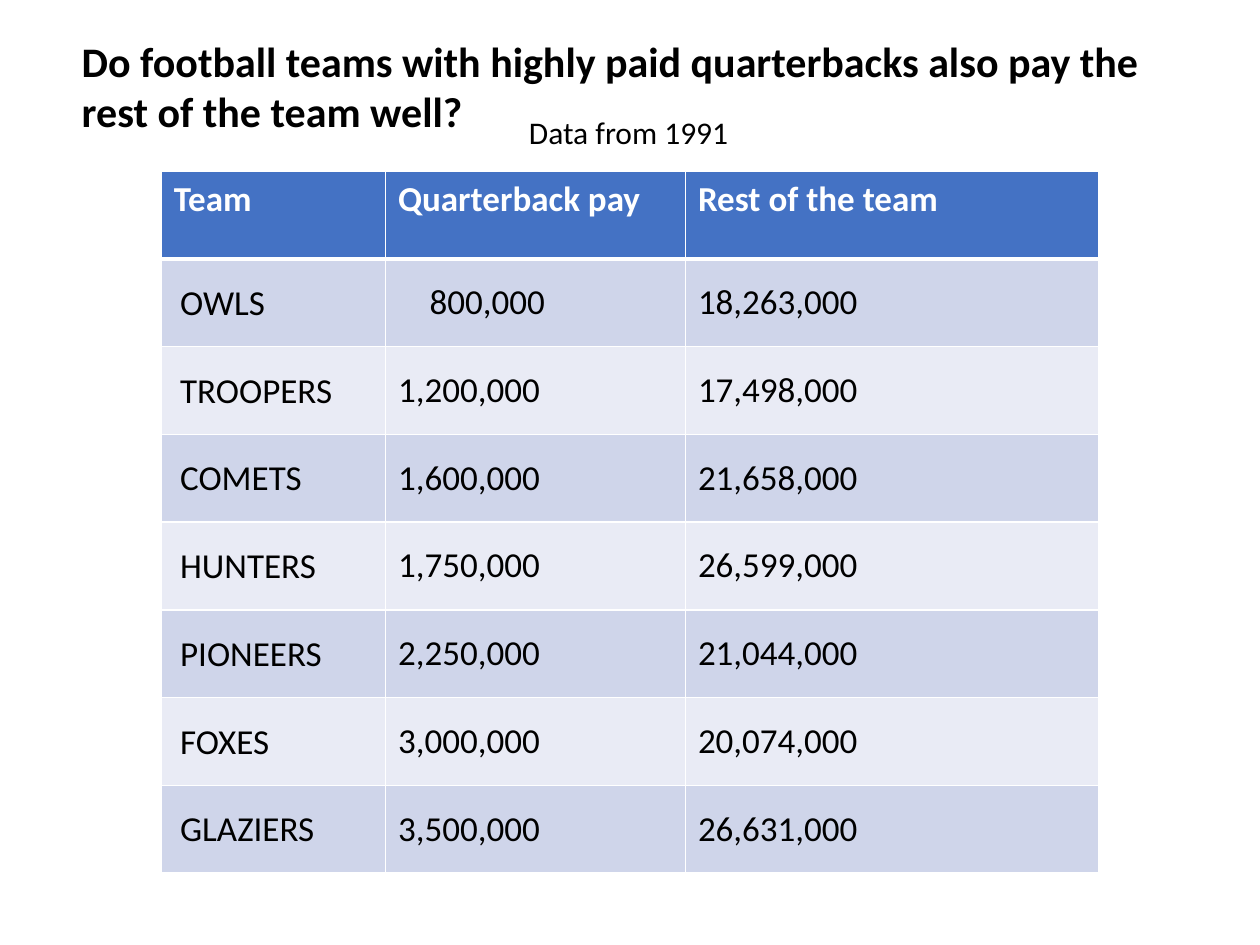
"""Build a slide with a table of quarterback pay and the rest of the team's pay."""
from lxml.etree import SubElement
from pptx import Presentation
from pptx.dml.color import RGBColor
from pptx.enum.text import MSO_ANCHOR as Anchor
from pptx.oxml.ns import qn
from pptx.util import Inches, Pt


def add_text(frame, text, size, color, bold=False):
    para = frame.paragraphs[0]
    span = para.add_run()
    span.text = text
    span.font.name = "Calibri"
    span.font.size = Pt(size)
    span.font.bold = bold
    span.font.color.rgb = RGBColor.from_string(color)
    return para


def paint_cell(cell, color, edges):
    props = cell._tc.get_or_add_tcPr()
    for side, width in edges.items():
        line = SubElement(props, qn(f"a:{side}"), w=str(Pt(width)))
        SubElement(SubElement(line, qn("a:solidFill")), qn("a:srgbClr"), val="FFFFFF")
    cell.fill.solid()
    cell.fill.fore_color.rgb = RGBColor.from_string(color)


HEADER = ("Team", "Quarterback pay", "Rest of the team")
TEAMS = [
    ("OWLS", "800,000", "18,263,000"),
    ("TROOPERS", "1,200,000", "17,498,000"),
    ("COMETS", "1,600,000", "21,658,000"),
    ("HUNTERS", "1,750,000", "26,599,000"),
    ("PIONEERS", "2,250,000", "21,044,000"),
    ("FOXES", "3,000,000", "20,074,000"),
    ("GLAZIERS", "3,500,000", "26,631,000"),
]
BANDS = ("E9EBF5", "CFD5EA")

deck = Presentation()
deck.slide_width, deck.slide_height = Inches(10), Inches(7.5)
page = deck.slides.add_slide(deck.slide_layouts[6])

title = page.shapes.add_textbox(Inches(0.55), Inches(0.23), Inches(8.91), Inches(0.91))
title.text_frame.word_wrap = True
add_text(title.text_frame,
         "Do football teams with highly paid quarterbacks also pay the rest of the team well?",
         24, "000000", True)

rows = [HEADER] + TEAMS
table = page.shapes.add_table(len(rows), len(HEADER), Inches(1.28), Inches(1.36),
                              Inches(7.44), Inches(5.57)).table
for column, width in zip(table.columns, (1.78, 2.38, 3.28)):
    column.width = Inches(width)

for r, values in enumerate(rows):
    for c, value in enumerate(values):
        cell = table.cell(r, c)
        is_header = r == 0
        para = add_text(cell.text_frame, value, 20, "FFFFFF" if is_header else "000000", is_header)
        edges = {"lnL": 1, "lnR": 1, "lnT": 3 if r == 1 else 1, "lnB": 3 if is_header else 1}
        paint_cell(cell, "4472C4" if is_header else BANDS[r % 2], edges)
        if is_header:
            continue
        cell.vertical_anchor = Anchor.MIDDLE
        if c == 0:
            cell.margin_left = cell.margin_right = cell.margin_top = Inches(0.01)
            cell.margin_bottom = 0
            para._p.get_or_add_pPr().set("marL", str(Inches(0.14)))
        elif value == "800,000":
            para._p.get_or_add_pPr().set("marL", str(Inches(0.25)))

caption = page.shapes.add_textbox(Inches(4.1), Inches(0.85), Inches(1.8), Inches(0.4))
caption.text_frame.word_wrap = False
add_text(caption.text_frame, "Data from 1991", 18, "000000")

deck.save("out.pptx")
